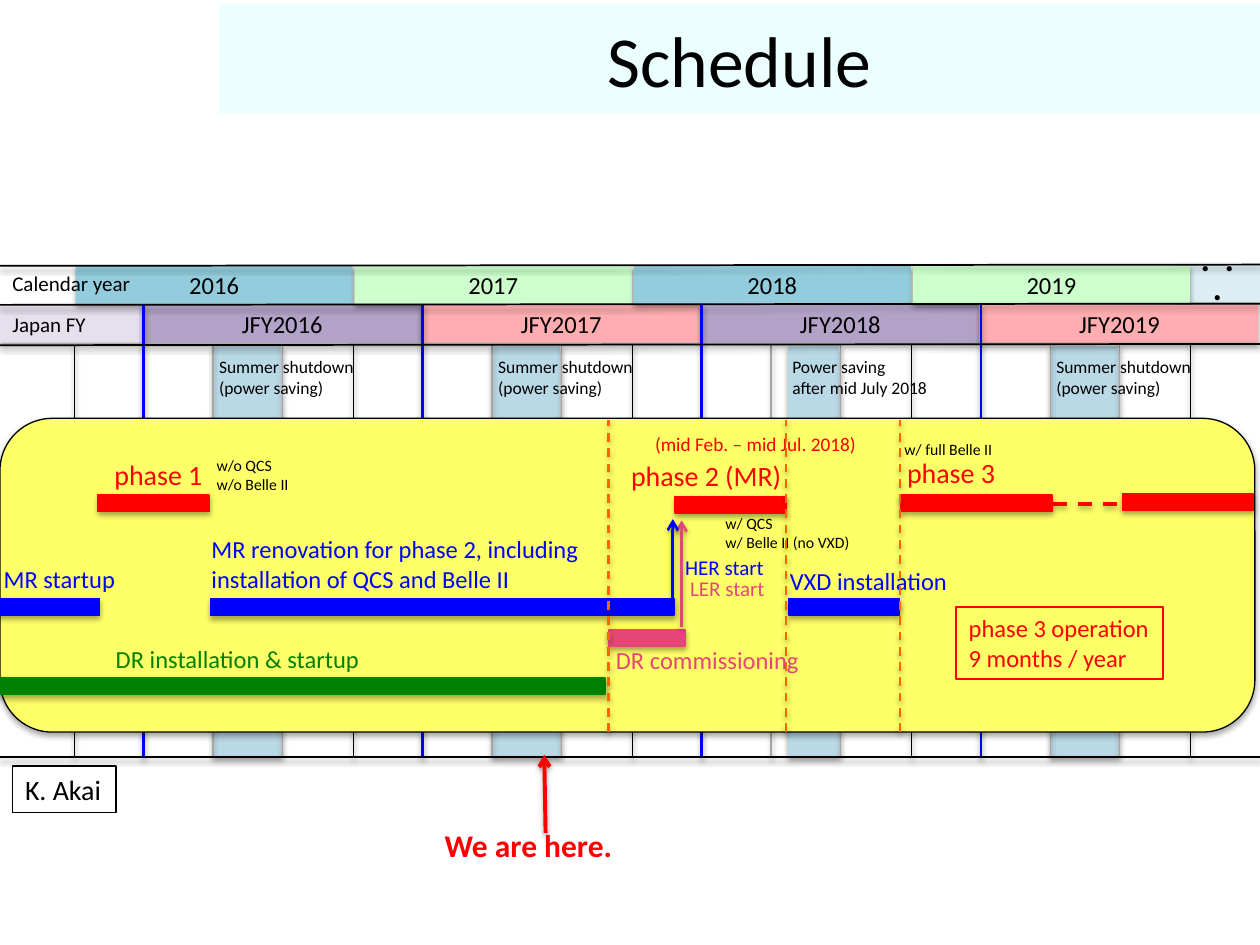
from pptx import Presentation
from pptx.dml.color import RGBColor
from pptx.enum.dml import MSO_LINE
from pptx.enum.shapes import MSO_CONNECTOR, MSO_SHAPE
from pptx.enum.text import MSO_ANCHOR, PP_ALIGN
from pptx.oxml import parse_xml
from pptx.oxml.ns import nsdecls
from pptx.util import Inches, Pt

RECT, ROUNDED = MSO_SHAPE.RECTANGLE, MSO_SHAPE.ROUNDED_RECTANGLE
STRAIGHT, DASH = MSO_CONNECTOR.STRAIGHT, MSO_LINE.DASH
TOP, MIDDLE = MSO_ANCHOR.TOP, MSO_ANCHOR.MIDDLE
LEFT, CENTER = PP_ALIGN.LEFT, PP_ALIGN.CENTER

BLACK, GRAY, RED, BLUE = "000000", "A6A6A6", "FF0000", "0000FF"
GREEN, PINK, ORANGE = "008000", "E44678", "FF6600"
BAND = "BAD9E7"
PITCH = 8.86 / 4  # inches per year

SHADOW = (
    f'<a:effectLst {nsdecls("a")}><a:outerShdw blurRad="39400" dist="22900" '
    'dir="5400000" rotWithShape="0"><a:srgbClr val="000000">'
    '<a:alpha val="35000"/></a:srgbClr></a:outerShdw></a:effectLst>'
)
ARROWHEAD = f'<a:tailEnd {nsdecls("a")} type="arrow"/>'


def add_box(at, fill=None, line=None, weight=1, text="", size=14, color=BLACK,
            align=LEFT, anchor=TOP, kind=RECT, shadow=True, font="Calibri", bold=False):
    """Add a shape, or a text box when there is neither fill nor line."""
    pos = [Inches(v) for v in at]
    if fill or line:
        s = slide.shapes.add_shape(kind, *pos)
        if fill:
            s.fill.solid()
            s.fill.fore_color.rgb = RGBColor.from_string(fill)
        else:
            s.fill.background()
        if line:
            s.line.color.rgb = RGBColor.from_string(line)
            s.line.width = Pt(weight)
        else:
            s.line.fill.background()
        if fill and shadow:
            s._element.spPr.append(parse_xml(SHADOW))
        else:
            s.shadow.inherit = False
    else:
        s = slide.shapes.add_textbox(*pos)
    if not text:
        return
    tf = s.text_frame
    tf.text = text
    tf.word_wrap = bool(fill)
    tf.vertical_anchor = anchor
    for p in tf.paragraphs:
        p.alignment = align
        for r in p.runs:
            r.font.name = font
            r.font.size = Pt(size)
            r.font.bold = bold
            r.font.color.rgb = RGBColor.from_string(color)


def add_line(x1, y1, x2, y2, color, weight, dashed=False, arrow=False):
    c = slide.shapes.add_connector(STRAIGHT, Inches(x1), Inches(y1), Inches(x2), Inches(y2))
    c.line.color.rgb = RGBColor.from_string(color)
    c.line.width = Pt(weight)
    if dashed:
        c.line.dash_style = DASH
    if arrow:
        c.line._get_or_add_ln().append(parse_xml(ARROWHEAD))
    c._element.spPr.append(parse_xml(SHADOW))


prs = Presentation()
prs.slide_width, prs.slide_height = Inches(10), Inches(7.5)
slide = prs.slides.add_slide(prs.slide_layouts[6])

add_box((1.74, 0.03, 8.26, 0.87), "EBFFFF", text="Schedule", size=41,
        align=CENTER, anchor=MIDDLE, shadow=False)
add_box((0.1, 6.08, 0.82, 0.37), line=BLACK, weight=0.75, text="K. Akai", size=16)

# Shutdown bands and grid
add_box((6.25, 2.75, 0.41, 3.26), BAND)
for year in (0, 1, 3):
    add_box((1.7 + year * PITCH, 2.75, 0.53, 3.26), BAND)
for year in range(5):
    x = 0.59 + year * PITCH
    add_line(x, 2.74, x, 6.01, BLACK, 0.75)
for year in range(4):
    for start in (1.69, 2.24):
        x = start + year * PITCH
        add_line(x, 2.74, x, 6.01, GRAY, 0.75)

# Calendar and fiscal years
add_box((9.33, 2.1, 0.67, 0.3), "DBEEF4", text="・・・", font="Lato",
        align=CENTER, anchor=MIDDLE)
add_box((0, 2.42, 1.13, 0.3), "E6E0EC", text="Japan FY", size=12, anchor=MIDDLE)
for year in range(4):
    calendar_fill, fiscal_fill = (("93CDDD", "B3A2C7"), ("CCFFCC", "FFADB0"))[year % 2]
    x = year * PITCH
    add_box((0.6 + x, 2.11, 2.2, 0.3), calendar_fill, text=str(2016 + year),
            align=CENTER, anchor=MIDDLE)
    add_box((1.14 + x, 2.42, 2.2, 0.3), fiscal_fill, text=f"JFY{2016 + year}",
            align=CENTER, anchor=MIDDLE)
for year in range(4):
    x = 1.14 + year * PITCH
    add_line(x, 2.42, x, 6.01, BLUE, 1.5)
for y in (2.11, 2.42, 2.74):
    add_line(0, y, 10, y - 0.01, BLACK, 1)
add_box((0, 2.1, 1.4, 0.3), text="Calendar year", size=12, anchor=MIDDLE)

add_box((0, 3.32, 9.96, 2.49), "FFFF67", BLACK, 0.75, kind=ROUNDED)
for year in (0, 1, 3):
    add_box((1.64 + year * PITCH, 2.78, 1.28, 0.44),
            text="Summer shutdown\n(power saving)", size=10)

# Activity bars: left, top, width, colour
add_line(8.36, 4, 8.89, 4, RED, 2, dashed=True)
for x, y, width, color in (
    (0.78, 3.93, 0.88, RED),
    (5.36, 3.94, 0.88, RED),
    (7.15, 3.93, 1.2, RED),
    (8.91, 3.92, 1.04, RED),
    (-0.02, 4.75, 0.81, BLUE),
    (1.67, 4.75, 3.68, BLUE),
    (6.26, 4.75, 0.88, BLUE),
    (0, 5.38, 4.8, GREEN),
    (4.83, 5, 0.61, PINK),
):
    add_box((x, y, width, 0.13), color, color)

add_line(5.41, 4.98, 5.41, 4.13, PINK, 1.5, arrow=True)
add_line(5.34, 4.75, 5.34, 4.12, BLUE, 1.5, arrow=True)

# Labels: position, text, size, colour
for at, text, size, color in (
    ((0.81, 3.58, 0.91, 0.37), "phase 1", 16, RED),
    ((4.91, 3.59, 1.41, 0.37), "phase 2 (MR)", 16, RED),
    ((7.1, 3.57, 0.91, 0.37), "phase 3", 16, RED),
    ((1.58, 4.19, 3.24, 0.57),
     "MR renovation for phase 2, including\ninstallation of QCS and Belle II", 14, BLUE),
    ((1.62, 3.57, 0.78, 0.4), "w/o QCS\nw/o Belle II", 9, BLACK),
    ((5.66, 4.03, 1.2, 0.4), "w/ QCS\nw/ Belle II (no VXD)", 9, BLACK),
    ((7.08, 3.44, 0.91, 0.25), "w/ full Belle II", 9, BLACK),
    ((4.79, 5.07, 1.66, 0.34), "DR commissioning", 14, PINK),
    ((0.82, 5.06, 2.15, 0.34), "DR installation & startup", 14, GREEN),
    ((-0.07, 4.43, 1.09, 0.34), "MR startup", 14, BLUE),
    ((6.17, 4.44, 1.46, 0.34), "VXD installation", 14, BLUE),
    ((5.34, 4.35, 0.83, 0.3), "HER start", 12, BLUE),
    ((5.38, 4.52, 0.8, 0.3), "LER start", 12, PINK),
    ((5.1, 3.38, 1.81, 0.29), "(mid Feb. – mid Jul. 2018)", 11, RED),
    ((6.19, 2.78, 1.29, 0.44), "Power saving\nafter mid July 2018", 10, BLACK),
):
    add_box(at, text=text, size=size, color=color)
add_box((7.59, 4.82, 1.64, 0.57), line=RED, weight=1.25,
        text="phase 3 operation\n9 months / year", color=RED)

# Phase boundaries, bottom rule and current date
for x in (4.83, 6.24, 7.14):
    add_line(x, 5.81, x, 3.33, ORANGE, 1.25, dashed=True)
add_line(0, 6.01, 10, 6.01, BLACK, 1)
add_line(4.33, 6.61, 4.32, 5.99, RED, 2.25, arrow=True)
add_box((3.43, 6.51, 1.56, 0.4), text="We are here.", size=18, color=RED, bold=True)

prs.save("out.pptx")
